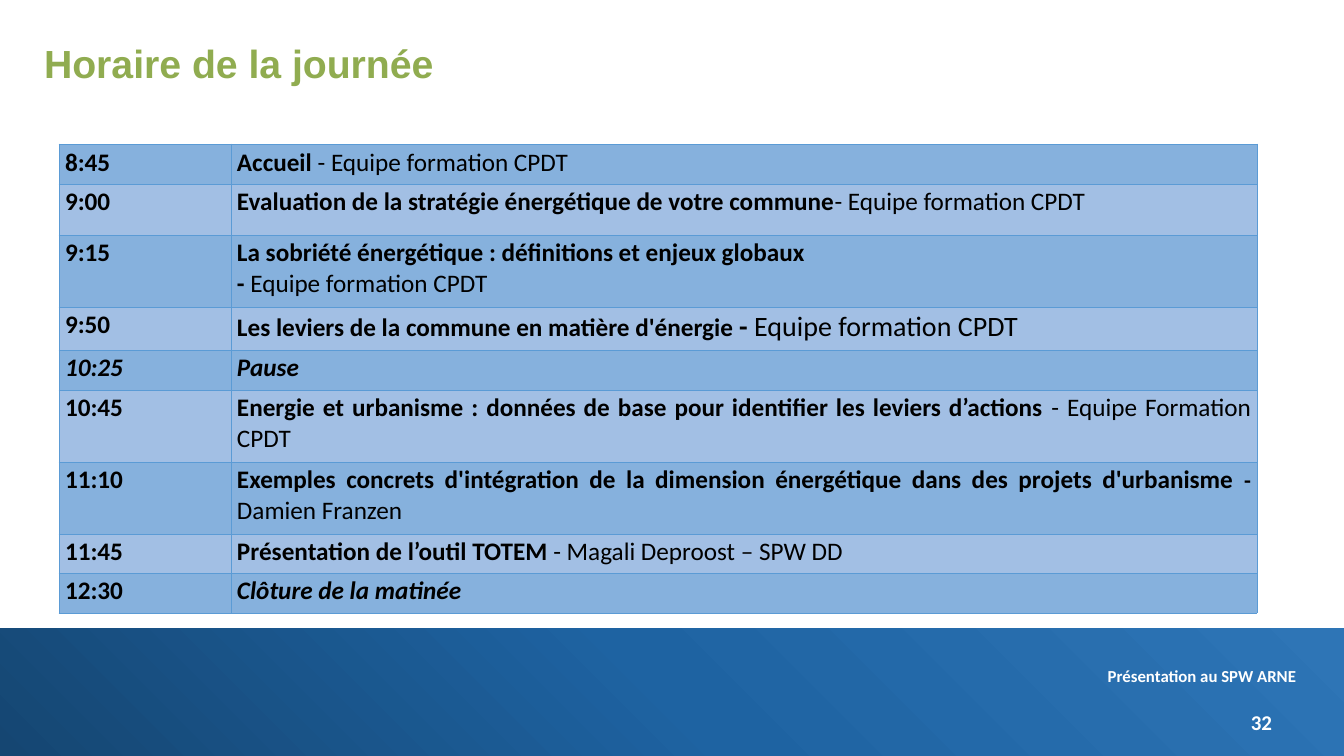
import copy

import pptx
import pptx.dml.color
import pptx.enum.shapes
import pptx.enum.text
import pptx.oxml
import pptx.oxml.ns
import pptx.util

PX = 914400 / 100.8
COLORS = {
    "title": "90AC50", "text": "000000", "footer": "FFFFFF",
    "odd": "86B1DD", "even": "A2BFE4", "border": "5B9BD5",
}
BAND_STOPS = [(0, "154672"), (0.5, "1E63A2"), (1, "2E75B6")]
ALIGN = pptx.enum.text.PP_ALIGN

# Each row: time, height, paragraphs of (text, style, size) runs; b bold, i italic
SCHEDULE = [
    ("8:45", 40, [[("Accueil ", "b", 18), ("- Equipe formation CPDT", "", 18)]]),
    ("9:00", 51, [[("Evaluation de la stratégie énergétique de votre commune", "b", 18),
                   ("- Equipe formation CPDT", "", 18)]]),
    ("9:15", 72, [[("La sobriété énergétique : définitions et enjeux globaux", "b", 18)],
                  [("- ", "b", 18), ("Equipe formation CPDT", "", 18)]]),
    ("9:50", 43, [[("Les leviers de la commune en matière d'énergie ", "b", 18),
                   ("- ", "b", 20), ("Equipe formation CPDT", "", 20)]]),
    ("10:25", 40, [[("Pause", "bi", 18)]]),
    ("10:45", 72, [[("Energie et urbanisme : données de base pour identifier "
                     "les leviers d’actions", "b", 18),
                    (" - Equipe Formation CPDT", "", 18)]]),
    ("11:10", 72, [[("Exemples concrets d'intégration de la dimension énergétique "
                     "dans des projets d'urbanisme", "b", 18),
                    (" - ", "b", 16), ("Damien Franzen", "", 18)]]),
    ("11:45", 39, [[("Présentation de l’outil TOTEM ", "b", 18),
                    ("- Magali Deproost – SPW DD", "", 18)]]),
    ("12:30", 40, [[("Clôture de la matinée", "bi", 18)]]),
]


def px(*lengths):
    return [pptx.util.Emu(round(n * PX)) for n in lengths]


def rgb(name):
    return pptx.dml.color.RGBColor.from_string(COLORS.get(name, name))


def style_run(r, size, color, font="Calibri", bold=True, italic=False):
    r.font.size = pptx.util.Pt(size)
    r.font.name = font
    r.font.bold = bold
    r.font.italic = italic
    r.font.color.rgb = rgb(color)


def add_band(s):
    band = s.shapes.add_shape(pptx.enum.shapes.MSO_SHAPE.RECTANGLE, *px(0, 629, 1344, 127))
    band.shadow.inherit = False
    band.line.fill.background()
    band.fill.gradient()
    band.fill.gradient_angle = 45
    first = band.fill._fill._gradFill.gsLst[0]
    first.addnext(copy.deepcopy(first))
    for stop, (position, color) in zip(band.fill.gradient_stops, BAND_STOPS):
        stop.position = position
        stop.color.rgb = rgb(color)


def add_label(s, box, text, size, align):
    tf = s.shapes.add_textbox(*px(*box)).text_frame
    tf.word_wrap = True
    tf.text = text
    p = tf.paragraphs[0]
    p.alignment = align
    style_run(p.runs[0], size, "footer")


def set_title(s, text):
    title = s.shapes.title
    title.left, title.top, title.width, title.height = px(34, 40, 1278, 91)
    tf = title.text_frame
    tf.text = text
    tf.vertical_anchor = pptx.enum.text.MSO_ANCHOR.TOP
    p = tf.paragraphs[0]
    p.alignment = ALIGN.LEFT
    p.line_spacing = 0.9
    style_run(p.runs[0], 28, "title", "Arial")


def add_borders(cell):
    tcPr = cell._tc.get_or_add_tcPr()
    for side in ("lnL", "lnR", "lnT", "lnB"):
        tcPr.append(pptx.oxml.parse_xml(
            f'<a:{side} {pptx.oxml.ns.nsdecls("a")} w="6350"><a:solidFill>'
            f'<a:srgbClr val="{COLORS["border"]}"/></a:solidFill></a:{side}>'))


def fill_cell(cell, paragraphs, color):
    add_borders(cell)
    cell.fill.solid()
    cell.fill.fore_color.rgb = rgb(color)
    cell.margin_left, cell.margin_right, cell.margin_top, cell.margin_bottom = px(6, 6, 3, 3)
    tf = cell.text_frame
    for i, runs in enumerate(paragraphs):
        p = tf.add_paragraph() if i else tf.paragraphs[0]
        p.alignment = ALIGN.JUSTIFY
        for text, style, size in runs:
            r = p.add_run()
            r.text = text
            style_run(r, size, "text", bold="b" in style, italic="i" in style)


def add_schedule(s):
    height = sum(row[1] for row in SCHEDULE)
    table = s.shapes.add_table(len(SCHEDULE), 2, *px(59, 144, 1198, height)).table
    table.columns[0].width, table.columns[1].width = px(172, 1026)
    for i, (time, row_height, paragraphs) in enumerate(SCHEDULE):
        table.rows[i].height = px(row_height)[0]
        color = "even" if i % 2 else "odd"
        time_style = "bi" if time == "10:25" else "b"
        fill_cell(table.cell(i, 0), [[(time, time_style, 18)]], color)
        fill_cell(table.cell(i, 1), paragraphs, color)


def main():
    prs = pptx.Presentation()
    prs.slide_width, prs.slide_height = px(1344, 756)
    s = prs.slides.add_slide(prs.slide_layouts[5])
    add_band(s)
    add_label(s, (1007, 661, 303, 30), "Présentation au SPW ARNE ", 12, ALIGN.RIGHT)
    add_label(s, (1241, 705, 72, 35), "32", 15, ALIGN.LEFT)
    set_title(s, "Horaire de la journée")
    add_schedule(s)
    prs.save("out.pptx")


if __name__ == "__main__":
    main()
